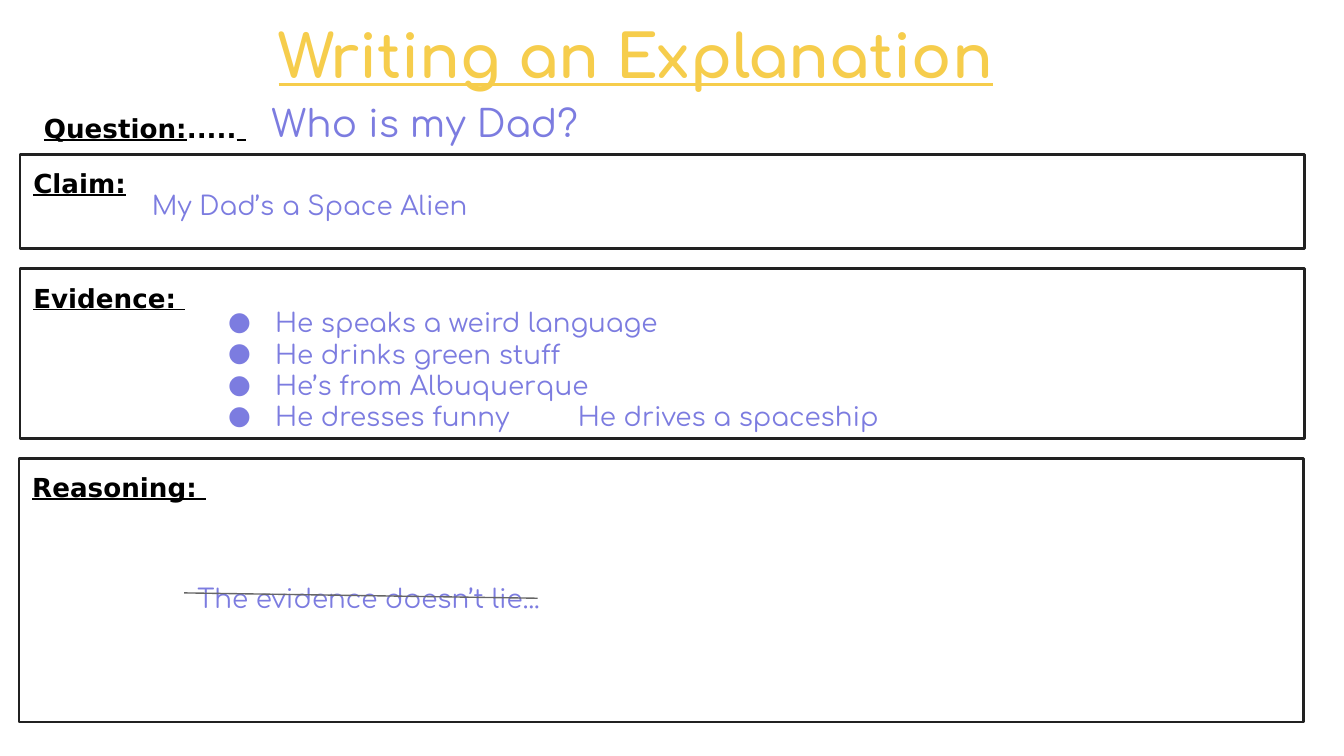
"""Build the "Writing an Explanation" slide with its claim, evidence and reasoning boxes."""
from lxml.etree import SubElement
from pptx import Presentation
from pptx.dml.color import RGBColor
from pptx.enum.shapes import MSO_CONNECTOR as CONNECTOR, MSO_SHAPE as SHAPE
from pptx.enum.text import MSO_ANCHOR as ANCHOR, MSO_AUTO_SIZE as AUTO_SIZE, PP_ALIGN as ALIGN
from pptx.oxml.ns import qn
from pptx.util import Cm, Pt

YELLOW = RGBColor(0xF6, 0xCD, 0x4C)
VIOLET = RGBColor(0x7C, 0x7C, 0xE0)
BLACK = RGBColor(0, 0, 0)
CHARCOAL = RGBColor(0x21, 0x21, 0x21)
GREY = RGBColor(0x66, 0x66, 0x66)
ROUNDED, PLAIN = "Comfortaa", "DejaVu Sans"
INSET = 0.25

TITLE = "Writing an Explanation"
QUESTION = [("Question:", True), (".....", False), (" ", True)]
SECTIONS = [
    ("Claim:", 0.38, 2.92, 1.78),
    ("Evidence: ", 0.38, 5.08, 3.2),
    ("Reasoning: ", 0.36, 8.66, 4.98),
]
ANSWERS = [
    ("Who is my Dad?", 20, (4.88, 1.65, 12.5, 1.27), INSET),
    ("My Dad’s a Space Alien", 14, (2.62, 3.33, 16.15, 1.27), INSET),
    ("The evidence doesn’t lie...", 14, (3.48, 10.16, 17.35, 2.06), 0.84),
]
EVIDENCE = [
    "He speaks a weird language",
    "He drinks green stuff",
    "He’s from Albuquerque",
    "He dresses funny\tHe drives a spaceship",
]
STRIKE = (3.48, 11.2, 10.16, 11.3)


def place(shape, left, top, width, height):
    shape.left, shape.top, shape.width, shape.height = map(Cm, (left, top, width, height))


def prepare(shape, anchor=ANCHOR.TOP, top_inset=INSET):
    frame = shape.text_frame
    frame.word_wrap = True
    frame.auto_size = AUTO_SIZE.NONE
    frame.vertical_anchor = anchor
    frame.margin_left = frame.margin_right = frame.margin_bottom = Cm(INSET)
    frame.margin_top = Cm(top_inset)
    return frame


def write(paragraph, text, size, font, color, bold=False, underline=False):
    run = paragraph.add_run()
    run.text = text
    run.font.size, run.font.name = Pt(size), font
    run.font.bold, run.font.underline = bold, underline
    run.font.color.rgb = color


def bullet(paragraph):
    paragraph.line_spacing = 1.0
    paragraph.space_before = Pt(0)
    props = paragraph._p.get_or_add_pPr()
    props.set("marL", str(Cm(1.27)))
    props.set("indent", str(Cm(-0.89)))
    SubElement(SubElement(props, qn("a:buClr")), qn("a:srgbClr"), val=str(VIOLET))
    SubElement(props, qn("a:buFont"), typeface=ROUNDED)
    SubElement(props, qn("a:buChar"), char="●")
    stops = SubElement(props, qn("a:tabLst"))
    SubElement(stops, qn("a:tab"), pos=str(Cm(6.99)), algn="l")


def main():
    deck = Presentation()
    deck.slide_width, deck.slide_height = Cm(25.4), Cm(14.28)
    slide = deck.slides.add_slide(deck.slide_layouts[1])
    shapes = slide.shapes
    title, evidence = slide.placeholders

    place(title, 3.23, 0, 17.58, 2.06)
    heading = prepare(title, ANCHOR.MIDDLE).paragraphs[0]
    heading.alignment = ALIGN.CENTER
    write(heading, TITLE, 32, ROUNDED, YELLOW, True, True)

    question = shapes.add_textbox(Cm(0.58), Cm(1.88), Cm(9.27), Cm(1.04))
    prompt = prepare(question).paragraphs[0]
    for text, underline in QUESTION:
        write(prompt, text, 14, PLAIN, BLACK, True, underline)

    for label, left, top, height in SECTIONS:
        section = shapes.add_shape(SHAPE.RECTANGLE, Cm(left), Cm(top), Cm(24.28), Cm(height))
        section.shadow.inherit = False
        section.fill.background()
        section.line.color.rgb = CHARCOAL
        section.line.width = Pt(1.5)
        caption = prepare(section).paragraphs[0]
        caption.alignment = ALIGN.LEFT
        write(caption, label, 14, PLAIN, BLACK, True, True)

    for text, size, area, top_inset in ANSWERS:
        answer = shapes.add_textbox(*map(Cm, area))
        write(prepare(answer, top_inset=top_inset).paragraphs[0], text, size, ROUNDED, VIOLET)

    place(evidence, 3.68, 5.54, 18.24, 3.2)
    points = prepare(evidence)
    for index, text in enumerate(EVIDENCE):
        point = points.add_paragraph() if index else points.paragraphs[0]
        bullet(point)
        write(point, text, 14, ROUNDED, VIOLET)

    strike = shapes.add_connector(CONNECTOR.STRAIGHT, *map(Cm, STRIKE))
    strike.line.color.rgb = GREY
    strike.line.width = Pt(0.75)
    SubElement(strike._element.spPr, qn("a:effectLst"))

    deck.save("out.pptx")


if __name__ == "__main__":
    main()
